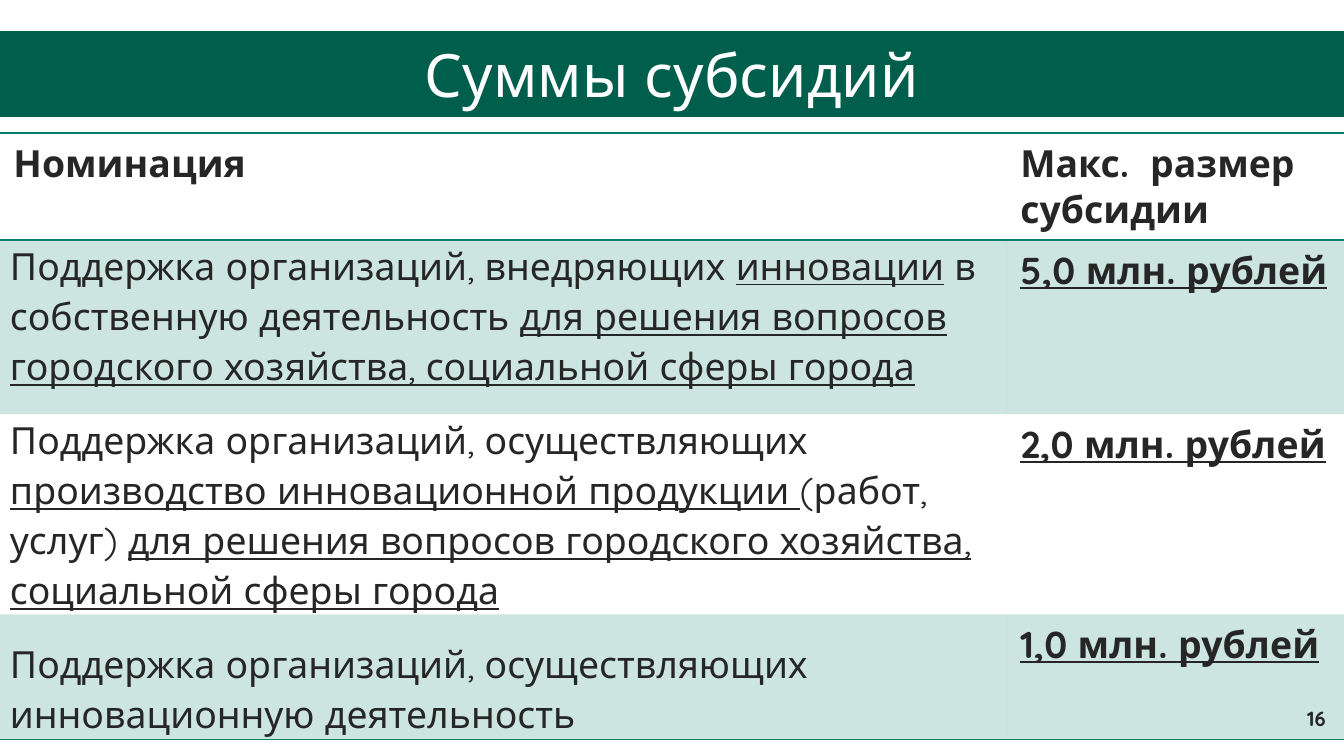
"""Build the slide with the table of subsidy amounts."""
from lxml import etree
from pptx import Presentation
from pptx.dml.color import RGBColor
from pptx.enum.shapes import MSO_SHAPE
from pptx.enum.text import MSO_ANCHOR, MSO_AUTO_SIZE, PP_ALIGN
from pptx.oxml.ns import qn
from pptx.util import Emu, Pt

RECT = MSO_SHAPE.RECTANGLE
MIDDLE = MSO_ANCHOR.MIDDLE
GROW = MSO_AUTO_SIZE.SHAPE_TO_FIT_TEXT
CENTER = PP_ALIGN.CENTER
FONT = "Quicksand"
DARK, GREEN, LINE, WHITE = "262626", "005E4C", "007E66", "FFFFFF"
PLAIN = "{2D5ABB26-0587-4C30-8999-92F81FD0307C}"

TITLE = "Суммы субсидий"
NUMBER = "16"
HEAD = ["Номинация", "Макс.  размер субсидии"]
ROWS = [
    ([("Поддержка организаций, внедряющих ", False), ("инновации", True),
      (" в собственную деятельность ", False),
      ("для решения вопросов городского хозяйства, социальной сферы города", True)],
     "5,0 млн. рублей"),
    ([("Поддержка организаций, осуществляющих ", False),
      ("производство инновационной продукции ", True), ("(работ, услуг) ", False),
      ("для решения вопросов городского хозяйства, социальной сферы города", True)],
     "2,0 млн. рублей"),
    ([("Поддержка организаций, осуществляющих инновационную деятельность", False)],
     "1,0 млн. рублей"),
]
WIDTHS = [1007, 337]
HEIGHTS = [107, 174, 200, 125]
TOPS = [0, 0, 23]


def px(n):
    return Emu(round(n * 914400 / 134.4))


def color(code):
    return RGBColor.from_string(code)


def write(frame, parts, size=20, code=DARK, bold=False):
    para = frame.paragraphs[0]
    for text, under in parts:
        run = para.add_run()
        run.text = text
        font = run.font
        font.name, font.size, font.bold = FONT, Pt(size), bold
        font.underline = under
        font.color.rgb = color(code)
    return para


def border(cell, tag):
    line = etree.SubElement(cell._tc.get_or_add_tcPr(), qn(tag), w=str(Pt(1)))
    fill = etree.SubElement(line, qn("a:solidFill"))
    etree.SubElement(fill, qn("a:srgbClr"), val=LINE)


def tint(cell):
    cell.fill.solid()
    cell.fill.fore_color.rgb = color(LINE)
    tone = cell._tc.tcPr.find(".//" + qn("a:solidFill") + "[last()]/" + qn("a:srgbClr"))
    for tone in cell._tc.tcPr.findall(qn("a:solidFill") + "/" + qn("a:srgbClr")):
        etree.SubElement(tone, qn("a:alpha"), val="20000")


def add_title(slide):
    bar = slide.shapes.add_shape(RECT, 0, px(31), px(1344), px(86))
    bar.shadow.inherit = False
    bar.fill.solid()
    bar.fill.fore_color.rgb = color(GREEN)
    bar.line.fill.background()
    bar.text_frame.vertical_anchor = MIDDLE
    write(bar.text_frame, [(TITLE, False)], 32, WHITE).alignment = CENTER


def add_grid(slide):
    frame = slide.shapes.add_table(len(HEIGHTS), len(WIDTHS), 0, px(133),
                                   px(sum(WIDTHS)), px(sum(HEIGHTS)))
    table = frame.table
    table.first_row = table.horz_banding = False
    table._tbl.tblPr.find(qn("a:tableStyleId")).text = PLAIN
    for col, width in zip(table.columns, WIDTHS):
        col.width = px(width)
    for row, height in zip(table.rows, HEIGHTS):
        row.height = px(height)

    for c, text in enumerate(HEAD):
        write(table.cell(0, c).text_frame, [(text, False)], bold=True)
        border(table.cell(0, c), "a:lnT")
        border(table.cell(0, c), "a:lnB")
        border(table.cell(len(ROWS), c), "a:lnB")

    for r, ((parts, amount), top) in enumerate(zip(ROWS, TOPS), 1):
        name, total = table.cell(r, 0), table.cell(r, 1)
        name.margin_left = name.margin_right = px(10)
        name.margin_top, name.margin_bottom = px(top), 0
        write(name.text_frame, parts).line_spacing = 1.07
        write(total.text_frame, [(amount, True)], bold=True)
        if r % 2:
            tint(name)
            tint(total)


def add_number(slide):
    box = slide.shapes.add_textbox(px(1294), px(699), px(50), px(39))
    box.text_frame.word_wrap = False
    box.text_frame.auto_size = GROW
    write(box.text_frame, [(NUMBER, False)], 11, bold=True)


def main():
    deck = Presentation()
    deck.slide_width, deck.slide_height = px(1344), px(756)
    slide = deck.slides.add_slide(deck.slide_layouts[6])
    add_title(slide)
    add_grid(slide)
    add_number(slide)
    deck.save("out.pptx")


if __name__ == "__main__":
    main()
